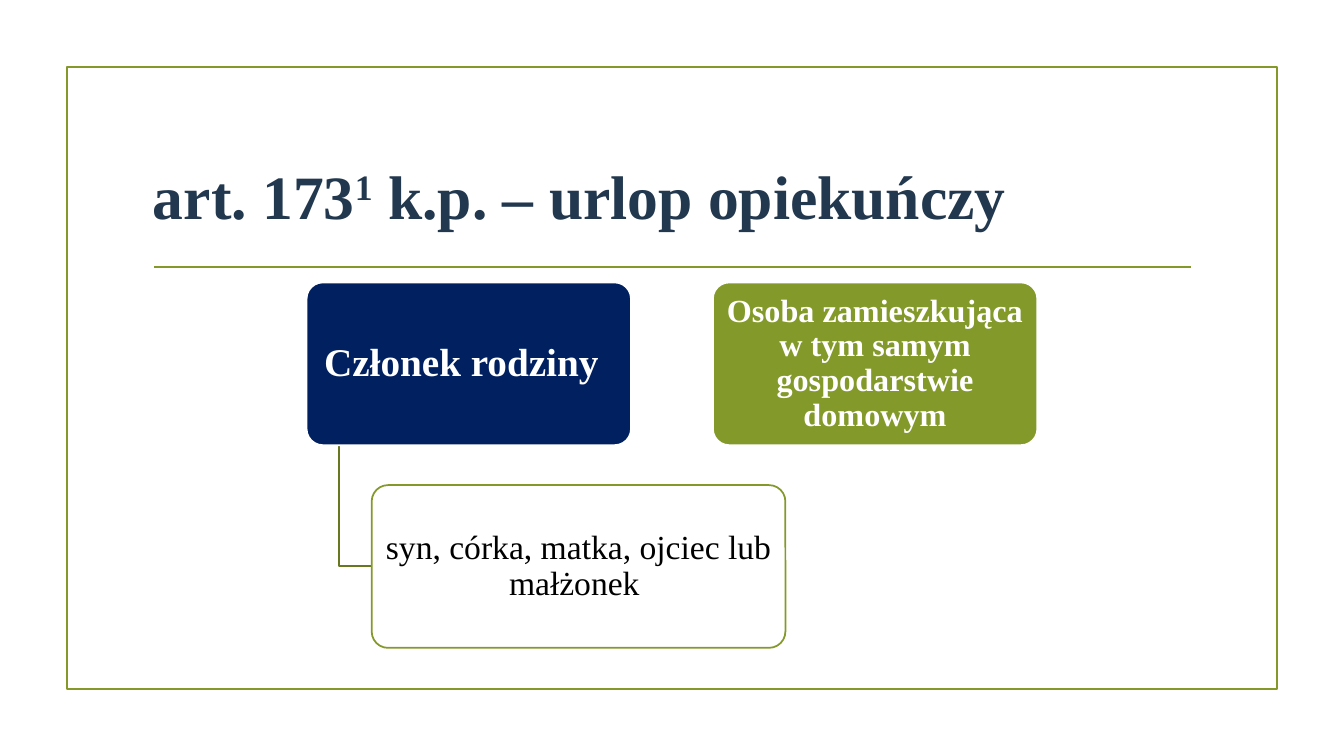
"""Build the slide on carer's leave with its small hierarchy of entitled persons."""
from dataclasses import dataclass

from lxml.etree import SubElement
from pptx import Presentation
from pptx.dml.color import RGBColor
from pptx.enum.shapes import MSO_CONNECTOR, MSO_SHAPE
from pptx.enum.text import MSO_ANCHOR, MSO_AUTO_SIZE, PP_ALIGN
from pptx.oxml.ns import qn
from pptx.util import Emu, Pt

EMU_PER_PX = 9525
FONT = "Times New Roman"
OLIVE, DARK_OLIVE, NAVY, SLATE = "83992A", "67791F", "002060", "22384E"
WHITE, BLACK = "FFFFFF", "000000"
LINE_WIDTH = Pt(1.25)
CORNER_RATIO = 0.1

ROW_TOP, CARD_WIDTH, CARD_HEIGHT = 269, 309, 155
FAMILY_LEFT, HOUSEHOLD_LEFT = 292, 679
RELATIVES_LEFT, RELATIVES_TOP, RELATIVES_WIDTH = 354, 462, 394
BRANCH_LEFT = FAMILY_LEFT + CARD_WIDTH // 10 + 1


@dataclass(frozen=True)
class Span:
    text: str
    size: int
    bold: bool = False
    baseline: int = 0


@dataclass(frozen=True)
class Card:
    left: int
    top: int
    width: int
    fill: str
    line: str
    ink: str
    spans: tuple[Span, ...]
    opacity: int = 100


CARDS = (
    Card(FAMILY_LEFT, ROW_TOP, CARD_WIDTH, NAVY, WHITE, WHITE,
         (Span("Członek rodziny ", 28, True), Span(" ", 15))),
    Card(RELATIVES_LEFT, RELATIVES_TOP, RELATIVES_WIDTH, WHITE, OLIVE, BLACK,
         (Span("syn, córka, matka, ojciec lub małżonek ", 24),), 90),
    Card(HOUSEHOLD_LEFT, ROW_TOP, CARD_WIDTH, OLIVE, WHITE, WHITE,
         (Span("Osoba zamieszkująca w tym samym gospodarstwie domowym", 23, True),)),
)
TITLE = (
    Span("art. 173", 44, True),
    Span("1", 44, True, 30000),
    Span(" k.p. – urlop opiekuńczy", 44, True),
)


def px(length: int) -> Emu:
    return Emu(length * EMU_PER_PX)


def rgb(colour: str) -> RGBColor:
    return RGBColor.from_string(colour)


def style_line(line, colour: str) -> None:
    line.color.rgb = rgb(colour)
    line.width = LINE_WIDTH


def add_spans(paragraph, spans: tuple[Span, ...], ink: str) -> None:
    for span in spans:
        run = paragraph.add_run()
        run.text = span.text
        run.font.name = FONT
        run.font.size = Pt(span.size)
        run.font.bold = span.bold
        run.font.color.rgb = rgb(ink)
        if span.baseline:
            run._r.get_or_add_rPr().set("baseline", str(span.baseline))


def add_title(slide) -> None:
    title = slide.shapes.title
    title.left, title.top, title.width, title.height = map(px, (136, 103, 1008, 165))
    frame = title.text_frame
    frame.auto_size = MSO_AUTO_SIZE.NONE
    frame.vertical_anchor = MSO_ANCHOR.MIDDLE
    paragraph = frame.paragraphs[0]
    paragraph.alignment = PP_ALIGN.LEFT
    add_spans(paragraph, TITLE, SLATE)


def add_border(slide) -> None:
    border = slide.shapes.add_shape(MSO_SHAPE.RECTANGLE, *map(px, (64, 64, 1152, 592)))
    border.shadow.inherit = False
    border.fill.background()
    style_line(border.line, OLIVE)


def add_title_rule(slide) -> None:
    rule = slide.shapes.add_connector(MSO_CONNECTOR.STRAIGHT, *map(px, (147, 254, 1134, 254)))
    style_line(rule.line, OLIVE)
    SubElement(rule._element.spPr, qn("a:effectLst"))


def add_branch(slide) -> None:
    middle = RELATIVES_TOP + CARD_HEIGHT // 2
    builder = slide.shapes.build_freeform(BRANCH_LEFT, ROW_TOP + CARD_HEIGHT, scale=EMU_PER_PX)
    builder.add_line_segments([(BRANCH_LEFT, middle), (RELATIVES_LEFT, middle)], close=False)
    branch = builder.convert_to_shape()
    branch.shadow.inherit = False
    branch.fill.background()
    style_line(branch.line, DARK_OLIVE)


def add_card(slide, card: Card) -> None:
    box = slide.shapes.add_shape(
        MSO_SHAPE.ROUNDED_RECTANGLE,
        px(card.left), px(card.top), px(card.width), px(CARD_HEIGHT))
    box.adjustments[0] = CORNER_RATIO
    box.shadow.inherit = False
    box.fill.solid()
    box.fill.fore_color.rgb = rgb(card.fill)
    if card.opacity < 100:
        colour = box._element.spPr.find(qn("a:solidFill")).find(qn("a:srgbClr"))
        SubElement(colour, qn("a:alpha")).set("val", str(card.opacity * 1000))
    style_line(box.line, card.line)
    frame = box.text_frame
    frame.word_wrap = True
    frame.vertical_anchor = MSO_ANCHOR.MIDDLE
    frame.margin_left = frame.margin_right = px(5)
    frame.margin_top = frame.margin_bottom = px(3)
    paragraph = frame.paragraphs[0]
    paragraph.alignment = PP_ALIGN.CENTER
    paragraph.line_spacing = 0.9
    add_spans(paragraph, card.spans, card.ink)


def main() -> None:
    deck = Presentation()
    deck.slide_width, deck.slide_height = px(1280), px(720)
    slide = deck.slides.add_slide(deck.slide_layouts[5])
    add_border(slide)
    add_title_rule(slide)
    add_title(slide)
    add_branch(slide)
    for card in CARDS:
        add_card(slide, card)
    deck.save("out.pptx")


if __name__ == "__main__":
    main()
